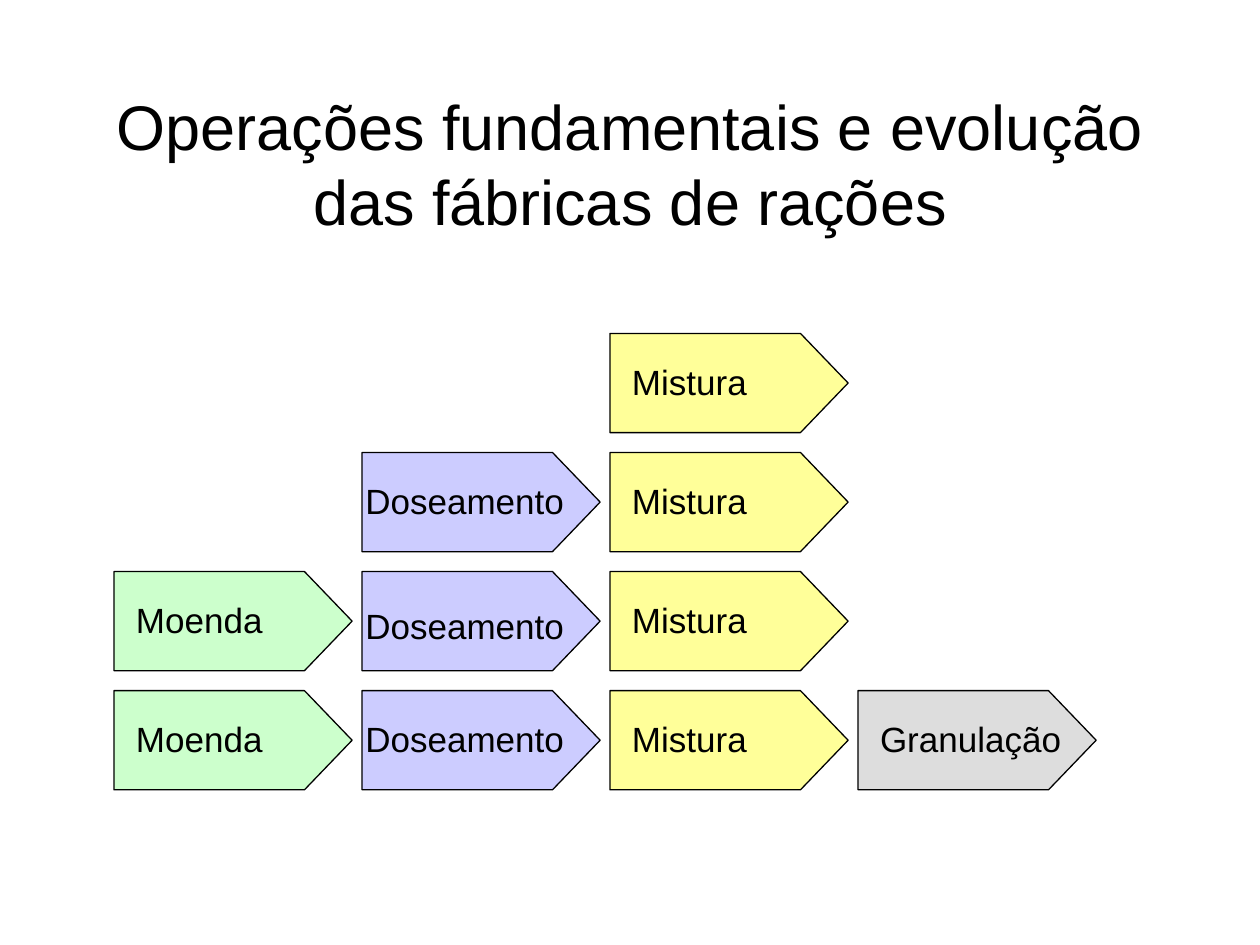
"""Build a slide on the basic operations and evolution of feed mills."""
from pptx import Presentation
from pptx.dml.color import RGBColor
from pptx.enum.shapes import MSO_SHAPE as Shape
from pptx.enum.text import MSO_ANCHOR as Anchor, PP_ALIGN as Align
from pptx.util import Pt

BLACK = RGBColor(0, 0, 0)
GREEN = RGBColor(0xCC, 0xFF, 0xCC)
BLUE = RGBColor(0xCC, 0xCC, 0xFF)
YELLOW = RGBColor(0xFF, 0xFF, 0x99)
GREY = RGBColor(0xDD, 0xDD, 0xDD)

TITLE = "Operações fundamentais e evolução das fábricas de rações"
OPERATIONS = [
    ("Moenda", GREEN, 5.5, 96.5),
    ("Doseamento", BLUE, -5.2, 130.3),
    ("Mistura", YELLOW, 5.5, 96.5),
    ("Granulação", GREY, 5.5, 118.8),
]
STAGES = [(2,), (1, 2), (0, 1, 2), (0, 1, 2, 3)]
LABEL_DROPS = {(2, 1): 3.5}

GRID_LEFT, GRID_TOP = 65.1, 190.5
COLUMN_STEP, ROW_STEP = 141.73, 68.04
ARROW_LENGTH, ARROW_HEIGHT = 136.1, 56.7
LABEL_TOP, LABEL_HEIGHT = 11.8, 31.2


def add_text(slide, text, box, size, align, anchor):
    frame = slide.shapes.add_textbox(*map(Pt, box)).text_frame
    frame.word_wrap = True
    frame.vertical_anchor = anchor
    paragraph = frame.paragraphs[0]
    paragraph.text = text
    paragraph.alignment = align
    paragraph.font.name = "Arial"
    paragraph.font.size = Pt(size)
    paragraph.font.color.rgb = BLACK


def add_arrow(slide, left, top, color):
    inset = (ARROW_LENGTH - ARROW_HEIGHT) / 2
    arrow = slide.shapes.add_shape(
        Shape.FLOWCHART_OFFPAGE_CONNECTOR,
        Pt(left + inset), Pt(top - inset), Pt(ARROW_HEIGHT), Pt(ARROW_LENGTH))
    arrow.rotation = 270
    arrow.shadow.inherit = False
    arrow.fill.solid()
    arrow.fill.fore_color.rgb = color
    arrow.line.color.rgb = BLACK
    arrow.line.width = Pt(0.75)


def main():
    deck = Presentation()
    deck.slide_width, deck.slide_height = Pt(720), Pt(540)
    slide = deck.slides.add_slide(deck.slide_layouts[6])
    add_text(slide, TITLE, (54, 48, 612, 90), 36, Align.CENTER, Anchor.MIDDLE)

    for row, stage in enumerate(STAGES):
        top = GRID_TOP + row * ROW_STEP
        for column in stage:
            name, color, indent, label_width = OPERATIONS[column]
            left = GRID_LEFT + column * COLUMN_STEP
            add_arrow(slide, left, top, color)
            label_top = top + LABEL_TOP + LABEL_DROPS.get((row, column), 0)
            add_text(slide, name, (left + indent, label_top, label_width, LABEL_HEIGHT),
                     20, Align.LEFT, Anchor.TOP)

    deck.save("out.pptx")


if __name__ == "__main__":
    main()
